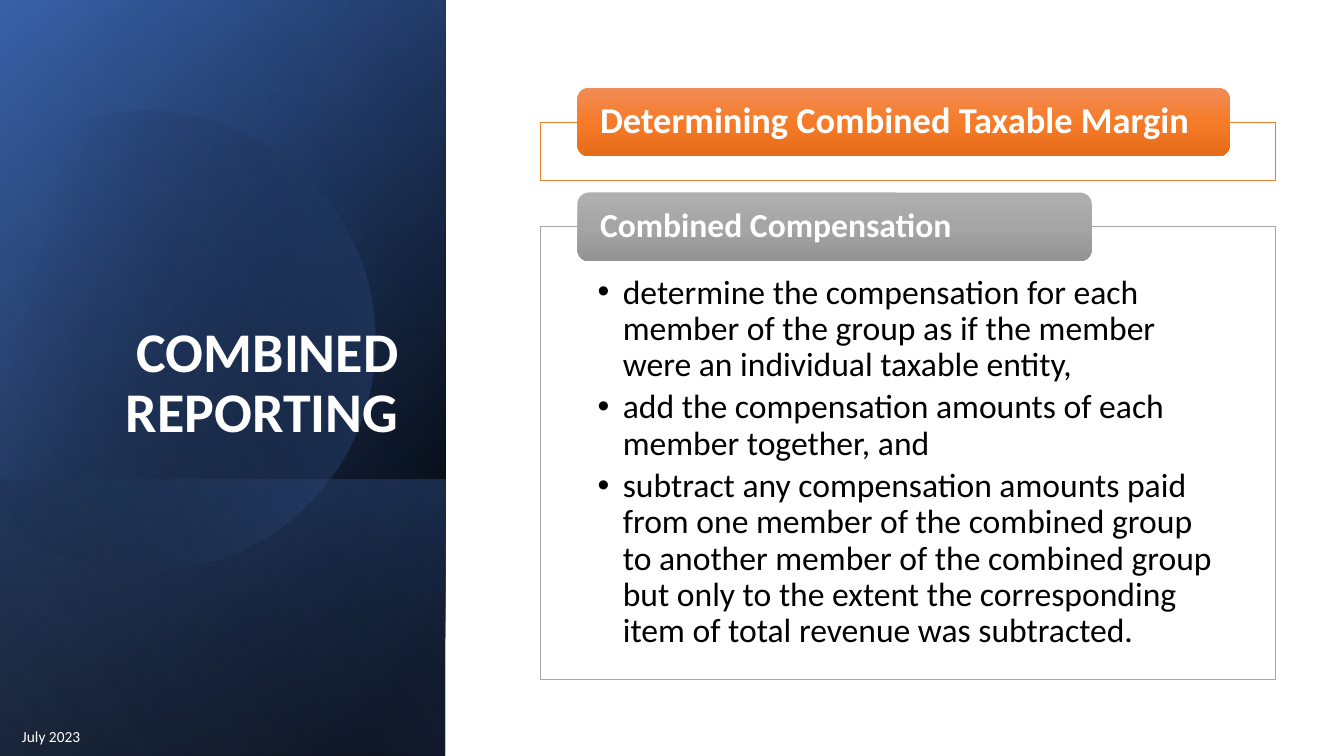
"""Build the Combined Reporting slide on compensation."""
from math import cos, radians, sin

from pptx import Presentation
from pptx.dml.color import RGBColor
from pptx.enum.shapes import MSO_SHAPE
from pptx.enum.text import MSO_ANCHOR, MSO_AUTO_SIZE, PP_ALIGN
from pptx.oxml import parse_xml
from pptx.oxml.ns import nsdecls, qn
from pptx.util import Pt

RECT, ROUNDED = MSO_SHAPE.RECTANGLE, MSO_SHAPE.ROUNDED_RECTANGLE
TOP, MIDDLE, BOTTOM = MSO_ANCHOR.TOP, MSO_ANCHOR.MIDDLE, MSO_ANCHOR.BOTTOM
LEFT, RIGHT = PP_ALIGN.LEFT, PP_ALIGN.RIGHT
FIT_SHAPE = MSO_AUTO_SIZE.SHAPE_TO_FIT_TEXT


def paint(shape, stops, angle=0, line=None):
    """Fill with (position, hex, opacity) stops; a single stop gives a solid fill."""
    shape.shadow.inherit = False
    shape.fill.solid()
    colors = [f'<a:srgbClr val="{color}"><a:alpha val="{opacity * 1000}"/></a:srgbClr>'
              for _, color, opacity in stops]
    if len(stops) == 1:
        xml = f'<a:solidFill {nsdecls("a")}>{colors[0]}</a:solidFill>'
    else:
        marks = "".join(f'<a:gs pos="{stop[0] * 1000}">{color}</a:gs>'
                        for stop, color in zip(stops, colors))
        xml = (f'<a:gradFill {nsdecls("a")} rotWithShape="1"><a:gsLst>{marks}</a:gsLst>'
               f'<a:lin ang="{angle * 60000}" scaled="0"/></a:gradFill>')
    properties = shape._element.spPr
    properties.replace(properties.find(qn("a:solidFill")), parse_xml(xml))
    if line:
        shape.line.color.rgb = RGBColor.from_string(line)
        shape.line.width = Pt(0.5)
    else:
        shape.line.fill.background()


def write(shape, *texts, size, color="FFFFFF", bold=False, align=LEFT, anchor=TOP,
          insets=(7.2, 3.6, 7.2, 3.6), spacing=0.9, after=0, bullet=False, wrap=True):
    """Write one paragraph per text into the shape."""
    frame = shape.text_frame
    frame.word_wrap = wrap
    frame.vertical_anchor = anchor
    (frame.margin_left, frame.margin_top,
     frame.margin_right, frame.margin_bottom) = map(Pt, insets)
    for index, text in enumerate(texts):
        paragraph = frame.add_paragraph() if index else frame.paragraphs[0]
        paragraph.alignment = align
        paragraph.line_spacing = spacing
        paragraph.space_after = Pt(after)
        run = paragraph.add_run()
        run.text = text
        run.font.name, run.font.size, run.font.bold = "Calibri", Pt(size), bold
        run.font.color.rgb = RGBColor.from_string(color)
        if bullet:
            layout = paragraph._p.get_or_add_pPr()
            layout.set("marL", str(Pt(18)))
            layout.set("indent", str(Pt(-18)))
            layout.append(parse_xml(f'<a:buFont {nsdecls("a")} typeface="Arial"/>'))
            layout.append(parse_xml(f'<a:buChar {nsdecls("a")} char="•"/>'))


deck = Presentation()
deck.slide_width, deck.slide_height = Pt(960), Pt(540)
slide = deck.slides.add_slide(deck.slide_layouts[6])
shapes = slide.shapes

PANEL = (-110.88, 110.88, 540, 318.24)
FOOT = (60.48, 282.24, 197.28, 318.24)
layers = [
    (PANEL, [(8, "000000", 100), (100, "2F5597", 100)], 50),
    (PANEL, [(0, "000000", 0), (99, "4472C4", 46)], 30),
    (FOOT, [(2, "4472C4", 29), (100, "000000", 30)], 130),
    None,
    (PANEL, [(0, "000000", 0), (99, "8FAADC", 11)], 120),
]

disc_start = (107.3, 79.2)
disc_segments = [
    [(177.1, 80.6), (241.2, 127.4), (261.4, 198)],
    [(286.6, 285.8), (236.2, 376.6), (149, 401.8)],
    [(94.3, 417.6), (38.2, 403.9), (-2.2, 370.1)],
    [(-10.8, 362.2)], [(-10.8, 126)], [(0, 115.9)],
    [(16.6, 102.2), (36, 92.2), (57.6, 85.7)],
    [(74.2, 81.4), (90.7, 79.2), (107.3, 79.2)],
]
disc_points = [disc_start]
for segment in disc_segments:
    if len(segment) == 1:
        disc_points += segment
        continue
    curve = [disc_points[-1], *segment]
    for step in range(1, 25):
        t = step / 24
        weights = ((1 - t) ** 3, 3 * t * (1 - t) ** 2, 3 * t * t * (1 - t), t ** 3)
        disc_points.append(tuple(sum(w * point[axis] for w, point in zip(weights, curve))
                                 for axis in (0, 1)))
center_x, center_y, tilt = 114.1, 240.8, radians(16.1)
upright = [(Pt(center_x + (x - center_x) * cos(tilt) - (y - center_y) * sin(tilt)),
            Pt(center_y + (x - center_x) * sin(tilt) + (y - center_y) * cos(tilt)))
           for x, y in disc_points]

for layer in layers:
    if layer:
        box, stops, angle = layer
        backdrop = shapes.add_shape(RECT, *map(Pt, box))
        backdrop.rotation = 90
        backdrop._element.spPr.xfrm.set("flipH", "1")
        paint(backdrop, stops, angle)
    else:
        outline = shapes.build_freeform(*upright[0])
        outline.add_line_segments(upright[1:], close=True)
        disc = outline.convert_to_shape()
        disc.rotation = 343.9
        paint(disc, [(29, "000000", 0), (100, "4472C4", 43)], 30)

title = shapes.add_textbox(Pt(46.08), Pt(132.48), Pt(245.52), Pt(188.64))
write(title, "COMBINED REPORTING", size=40, bold=True, align=RIGHT, anchor=BOTTOM)

sections = [
    ("Determining Combined Taxable Margin", 26, 62.64, 465.84, 87.12, 41.76,
     "ED7D31", ("F18C57", "F67B28", "E56C19"), []),
    ("Combined Compensation", 24, 137.52, 367.2, 162, 323.28,
     "A5A5A5", ("AFAFAF", "A5A5A5", "939393"),
     ["determine the compensation for each member of the group as if the member "
      "were an individual taxable entity,",
      "add the compensation amounts of each member together, and",
      "subtract any compensation amounts paid from one member of the combined group "
      "to another member of the combined group but only to the extent the "
      "corresponding item of total revenue was subtracted."]),
]
for heading, size, tab_top, tab_width, top, height, line, shades, points in sections:
    body = shapes.add_shape(RECT, Pt(385.92), Pt(top), Pt(524.88), Pt(height))
    paint(body, [(0, "FFFFFF", 90)], line=line)
    write(body, *points, size=24, color="000000", insets=(41, 34.5, 41, 13.7),
          after=4.3, bullet=True)
    tab = shapes.add_shape(ROUNDED, Pt(412.56), Pt(tab_top), Pt(tab_width), Pt(48.96))
    paint(tab, [(position, shade, 100) for position, shade in zip((0, 50, 100), shades)], 90)
    write(tab, heading, size=size, bold=True, anchor=MIDDLE, insets=(13.7, 0, 13.7, 0))

date = shapes.add_textbox(Pt(8.64), Pt(515.52), Pt(57.6), Pt(20.88))
write(date, "July 2023", size=11, spacing=1.0, wrap=False)
date.text_frame.auto_size = FIT_SHAPE

deck.save("out.pptx")
